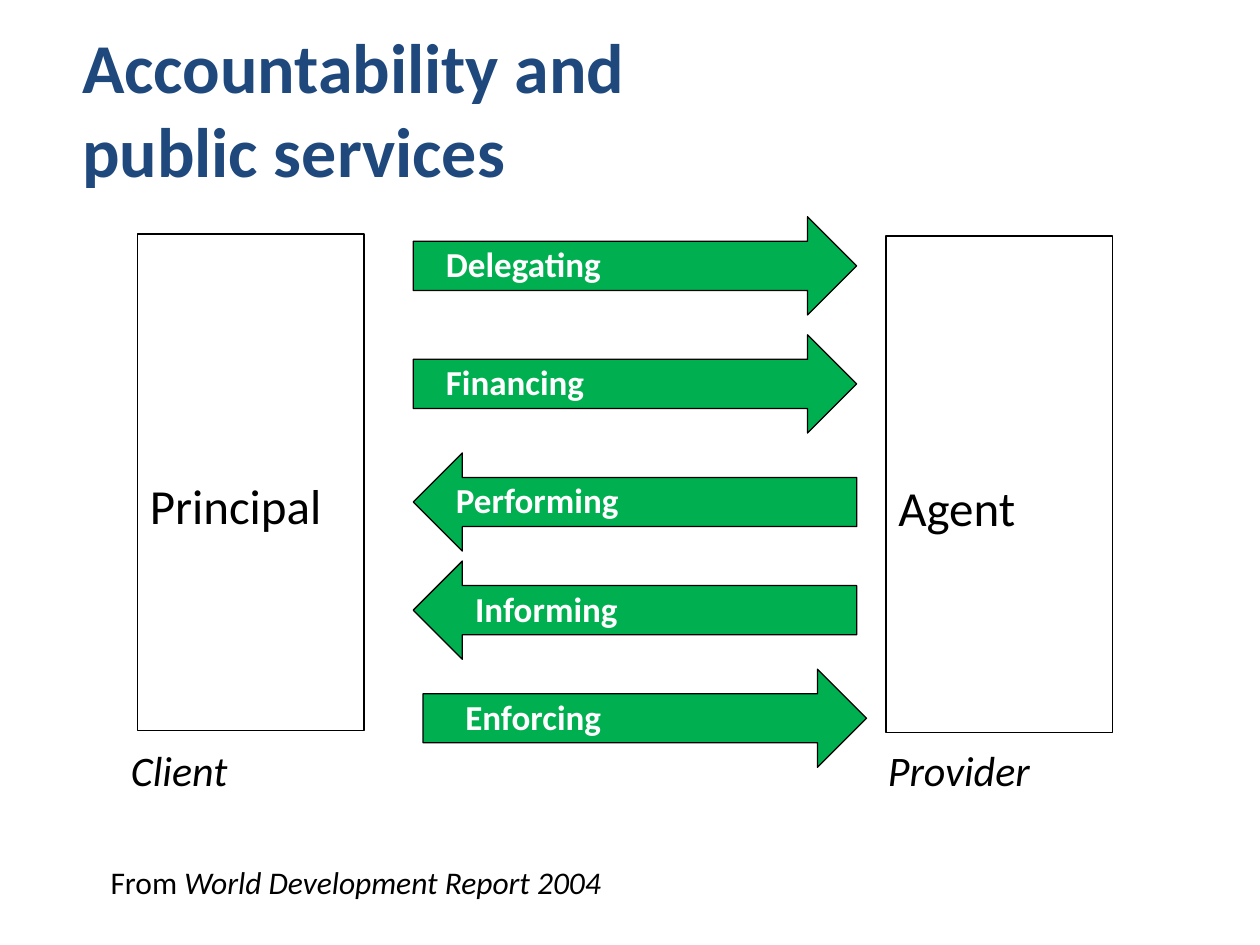
from pptx import Presentation
from pptx.dml.color import RGBColor
from pptx.enum.shapes import MSO_SHAPE
from pptx.enum.text import MSO_ANCHOR, MSO_AUTO_SIZE, PP_ALIGN
from pptx.util import Cm, Pt

RECTANGLE, ARROW = MSO_SHAPE.RECTANGLE, MSO_SHAPE.RIGHT_ARROW
TOP, MIDDLE = MSO_ANCHOR.TOP, MSO_ANCHOR.MIDDLE
LEFT = PP_ALIGN.LEFT
NO_AUTOFIT = MSO_AUTO_SIZE.NONE

FONT = "Calibri"
COLORS = {"title": "1F497D", "text": "000000", "line": "000000",
          "arrow": "00B050", "label": "FFFFFF"}

# Content, with positions in centimetres
TITLE_LINES = ["Accountability and", "public services"]
# party, box left, box top, role, role left
PARTIES = [("Principal", 2.77, 4.72, "Client", 2.39),
           ("Agent", 17.86, 4.76, "Provider", 17.65)]
# label, arrow left, arrow top, label left, rotation
FLOWS = [("Delegating", 8.33, 4.37, 8.74, 0),
         ("Financing", 8.33, 6.75, 8.74, 0),
         ("Performing", 8.33, 9.13, 8.94, 180),
         ("Informing", 8.33, 11.31, 9.33, 180),
         ("Enforcing", 8.53, 13.49, 9.13, 0)]
SOURCE = [("From ", False), ("World Development Report 2004", True)]

PARTY_SIZE = (4.57, 10.01)
PARTY_TEXT_INSET = 4.87
ROLE_TOP, ROLE_SIZE = 14.88, (5.16, 1.28)
ARROW_SIZE = (8.94, 1.98)
LABEL_SIZE, LABEL_DROP = (7.54, 1.12), 0.4


def rgb(name):
    return RGBColor.from_string(COLORS[name])


def add_run(paragraph, text, size, color="text", bold=False, italic=False):
    run = paragraph.add_run()
    run.text = text
    font = run.font
    font.name, font.size = FONT, Pt(size)
    font.bold, font.italic = bold, italic
    font.color.rgb = rgb(color)


def set_frame(shape, anchor=TOP):
    frame = shape.text_frame
    frame.word_wrap = True
    frame.auto_size = NO_AUTOFIT
    frame.vertical_anchor = anchor
    paragraph = frame.paragraphs[0]
    paragraph.alignment = LEFT
    return paragraph


def add_text(slide, left, top, size):
    return set_frame(slide.shapes.add_textbox(Cm(left), Cm(top), *map(Cm, size)))


def add_outlined(slide, kind, left, top, size, fill=None):
    shape = slide.shapes.add_shape(kind, Cm(left), Cm(top), *map(Cm, size))
    shape.shadow.inherit = False
    shape.line.color.rgb = rgb("line")
    shape.line.width = Pt(0.75)
    if fill:
        shape.fill.solid()
        shape.fill.fore_color.rgb = rgb(fill)
    else:
        shape.fill.background()
    return shape


def main():
    prs = Presentation()
    prs.slide_width, prs.slide_height = Cm(25.4), Cm(19.05)
    slide = prs.slides.add_slide(prs.slide_layouts[5])

    # Title
    title = slide.shapes.title
    title.left, title.top, title.width, title.height = map(Cm, (1.4, 0.58, 22.86, 3.18))
    heading = set_frame(title, MIDDLE)
    for i, line in enumerate(TITLE_LINES):
        if i:
            heading.add_line_break()
        add_run(heading, line, 40, "title", bold=True)

    # Parties and their roles
    for party, left, top, role, role_left in PARTIES:
        box = add_outlined(slide, RECTANGLE, left, top, PARTY_SIZE)
        box.text_frame.margin_top = Cm(PARTY_TEXT_INSET)
        add_run(set_frame(box), party, 28)
        add_run(add_text(slide, role_left, ROLE_TOP, ROLE_SIZE), role, 24, italic=True)

    # Flows between the parties
    for label, left, top, label_left, rotation in FLOWS:
        arrow = add_outlined(slide, ARROW, left, top, ARROW_SIZE, "arrow")
        arrow.rotation = rotation
        caption = add_text(slide, label_left, top + LABEL_DROP, LABEL_SIZE)
        add_run(caption, label, 20, "label", bold=True)

    # Source line
    source = add_text(slide, 1.98, 17.27, (11.68, 1.02))
    for text, italic in SOURCE:
        add_run(source, text, 18, italic=italic)

    prs.save("out.pptx")


if __name__ == "__main__":
    main()
